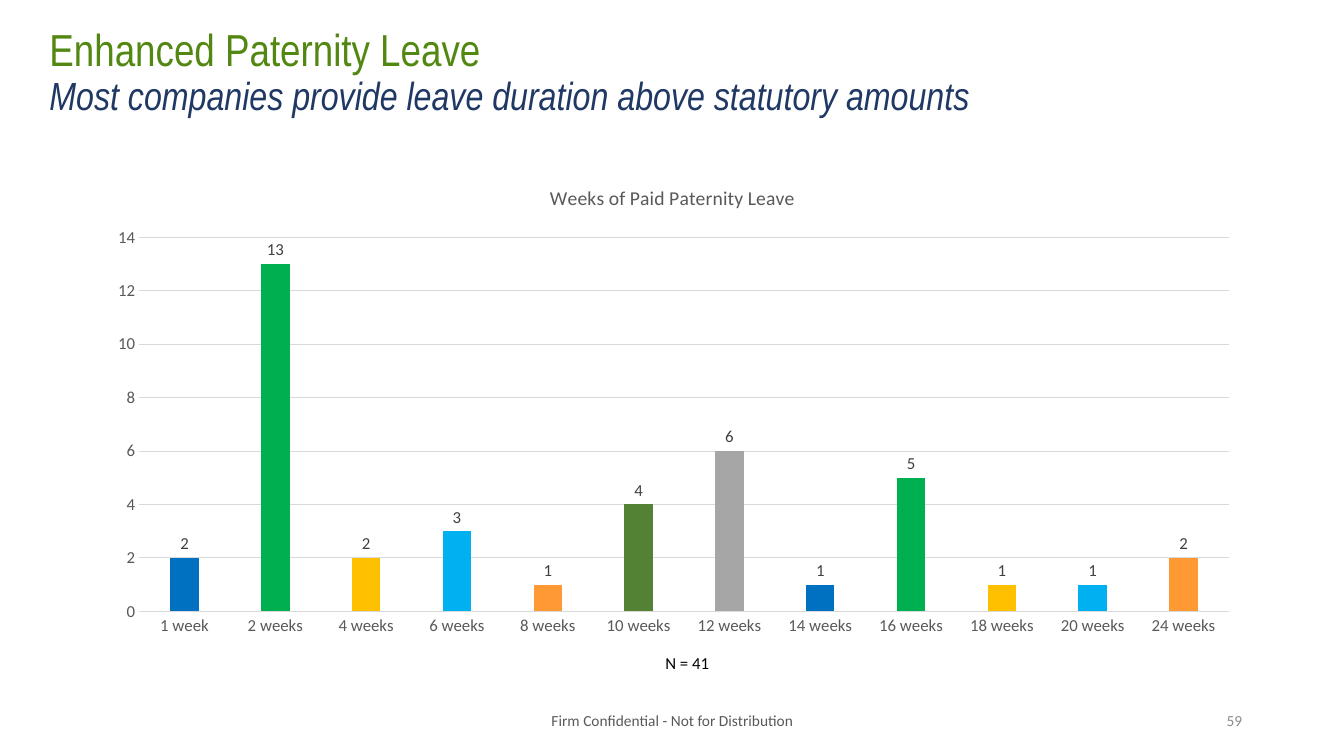
from pptx import Presentation
from pptx import util as u
from pptx.chart import data as cd
from pptx.dml import color
from pptx.enum import chart as ch, text
from pptx.oxml import parse_xml
from pptx.oxml.ns import nsdecls

COLORS = {
    "title": "528811", "subtitle": "203864", "black": "000000",
    "gray": "595959", "number": "8C8C8C", "label": "404040", "grid": "D9D9D9",
    "blue": "0070C0", "green": "00B050", "gold": "FFC000", "sky": "00B0F0",
    "orange": "FF9933", "olive": "548235", "silver": "A6A6A6", "series": "5B9BD5",
}
LEAVE = [
    ("1 week", 2, "blue"), ("2 weeks", 13, "green"), ("4 weeks", 2, "gold"),
    ("6 weeks", 3, "sky"), ("8 weeks", 1, "orange"), ("10 weeks", 4, "olive"),
    ("12 weeks", 6, "silver"), ("14 weeks", 1, "blue"), ("16 weeks", 5, "green"),
    ("18 weeks", 1, "gold"), ("20 weeks", 1, "sky"), ("24 weeks", 2, "orange"),
]


def rgb(name):
    return color.RGBColor.from_string(COLORS[name])


class SlideBuilder:
    def __init__(self, prs):
        self.body, self.heading = "Calibri", "Arial Narrow"
        self.s = prs.slides.add_slide(prs.slide_layouts[5])

    def font(self, f, size, col, name=None, italic=None):
        f.name, f.size, f.italic, f.bold = name or self.body, u.Pt(size), italic, False
        f.color.rgb = rgb(col)

    def run(self, p, words, *style):
        r = p.add_run()
        r.text = words
        self.font(r.font, *style)

    def title(self, box, main, sub):
        sp = self.s.shapes.title
        sp.left, sp.top, sp.width, sp.height = map(u.Inches, box)
        tf = sp.text_frame
        tf.word_wrap = True
        tf.auto_size = text.MSO_AUTO_SIZE.NONE
        tf.vertical_anchor = text.MSO_ANCHOR.MIDDLE
        p = tf.paragraphs[0]
        p.alignment, p.line_spacing = text.PP_ALIGN.LEFT, 0.9
        self.run(p, main, 32, "title", self.heading)
        p.add_line_break()
        self.run(p, sub, 28, "subtitle", self.heading, True)

    def label(self, box, words, size, col, align="LEFT", anchor="MIDDLE", wrap=True):
        tf = self.s.shapes.add_textbox(*map(u.Inches, box)).text_frame
        tf.word_wrap = wrap
        tf.vertical_anchor = text.MSO_ANCHOR[anchor]
        p = tf.paragraphs[0]
        p.alignment = text.PP_ALIGN[align]
        self.run(p, words, size, col)

    def line(self, fmt):
        fmt.color.rgb = rgb("grid")
        fmt.width = u.Pt(0.75)

    def column_chart(self, box, heading, rows, plot_area):
        data = cd.CategoryChartData()
        data.categories = [name for name, _, _ in rows]
        data.add_series("Series 1", [value for _, value, _ in rows])
        chart = self.s.shapes.add_chart(
            ch.XL_CHART_TYPE.COLUMN_CLUSTERED, *map(u.Inches, box), data).chart
        self.font(chart.font, 12, "black")
        chart.has_legend = False
        chart.has_title = True
        self.run(chart.chart_title.text_frame.paragraphs[0], heading, 14, "gray")
        chart.chart_title.include_in_layout = False

        # Axes
        cat, val = chart.category_axis, chart.value_axis
        for axis in (cat, val):
            axis.major_tick_mark = axis.minor_tick_mark = ch.XL_TICK_MARK.NONE
            self.font(axis.tick_labels.font, 12, "gray")
        self.line(cat.format.line)
        val.format.line.fill.background()
        self.line(val.major_gridlines.format.line)
        val.minimum_scale, val.maximum_scale, val.major_unit = 0, 14, 2

        # Columns and values
        plot = chart.plots[0]
        plot.gap_width, plot.overlap, plot.vary_by_categories = 219, -27, False
        series = plot.series[0]
        series.format.fill.solid()
        series.format.fill.fore_color.rgb = rgb("series")
        for i, (_, _, col) in enumerate(rows):
            fill = series.points[i].format.fill
            fill.solid()
            fill.fore_color.rgb = rgb(col)
        labels = series.data_labels
        labels.show_value = True
        labels.position = ch.XL_LABEL_POSITION.OUTSIDE_END
        self.font(labels.font, 12, "label")

        # Inner plot position as fractions of the chart
        area = chart._chartSpace.chart.plotArea
        for old in area.findall("{*}layout"):
            area.remove(old)
        parts = "".join(f'<c:{k} val="{v}"/>' for k, v in zip("xywh", plot_area))
        area.insert(0, parse_xml(
            f'<c:layout {nsdecls("c")}><c:manualLayout><c:layoutTarget val="inner"/>'
            '<c:xMode val="edge"/><c:yMode val="edge"/>'
            f'{parts}</c:manualLayout></c:layout>'))


def main():
    prs = Presentation()
    prs.slide_width, prs.slide_height = u.Inches(13.33), u.Inches(7.5)
    b = SlideBuilder(prs)

    # Title and chart
    b.title((0.39, 0, 11.5, 1.45), "Enhanced Paternity Leave",
            "Most companies provide leave duration above statutory amounts")
    b.column_chart((0.92, 1.64, 11.5, 4.76), "Weeks of Paid Paternity Leave",
                   LEAVE, (0.04, 0.15, 0.94, 0.78))

    # Footer and sample size
    b.label((4.42, 6.95, 4.5, 0.4), "Firm Confidential - Not for Distribution",
            11, "gray", "CENTER")
    b.label((9.42, 6.95, 3, 0.4), "59", 11, "number", "RIGHT")
    b.label((6.5, 6.43, 0.78, 0.3), "N = 41", 12, "black", anchor="TOP", wrap=False)

    prs.save("out.pptx")


if __name__ == "__main__":
    main()
